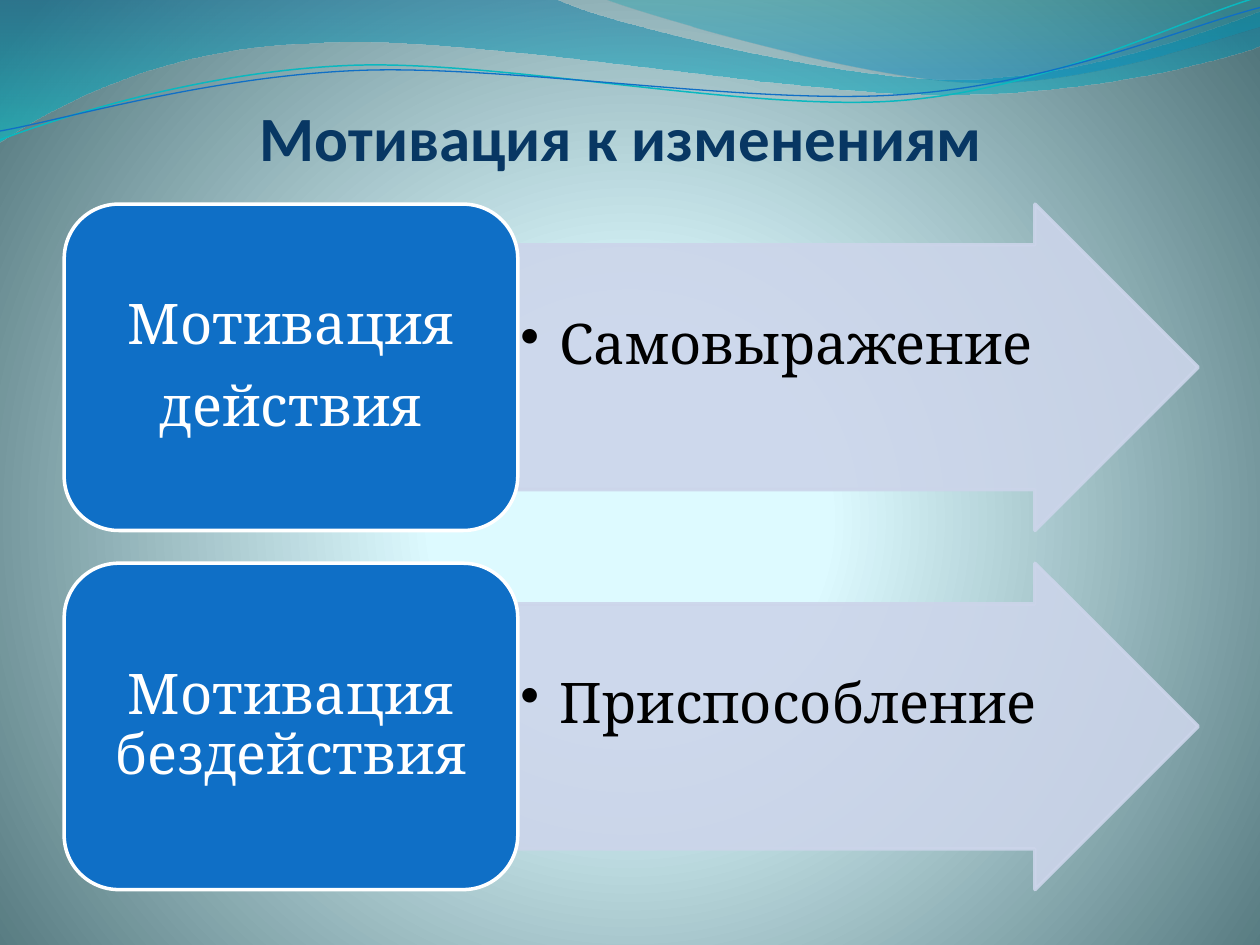
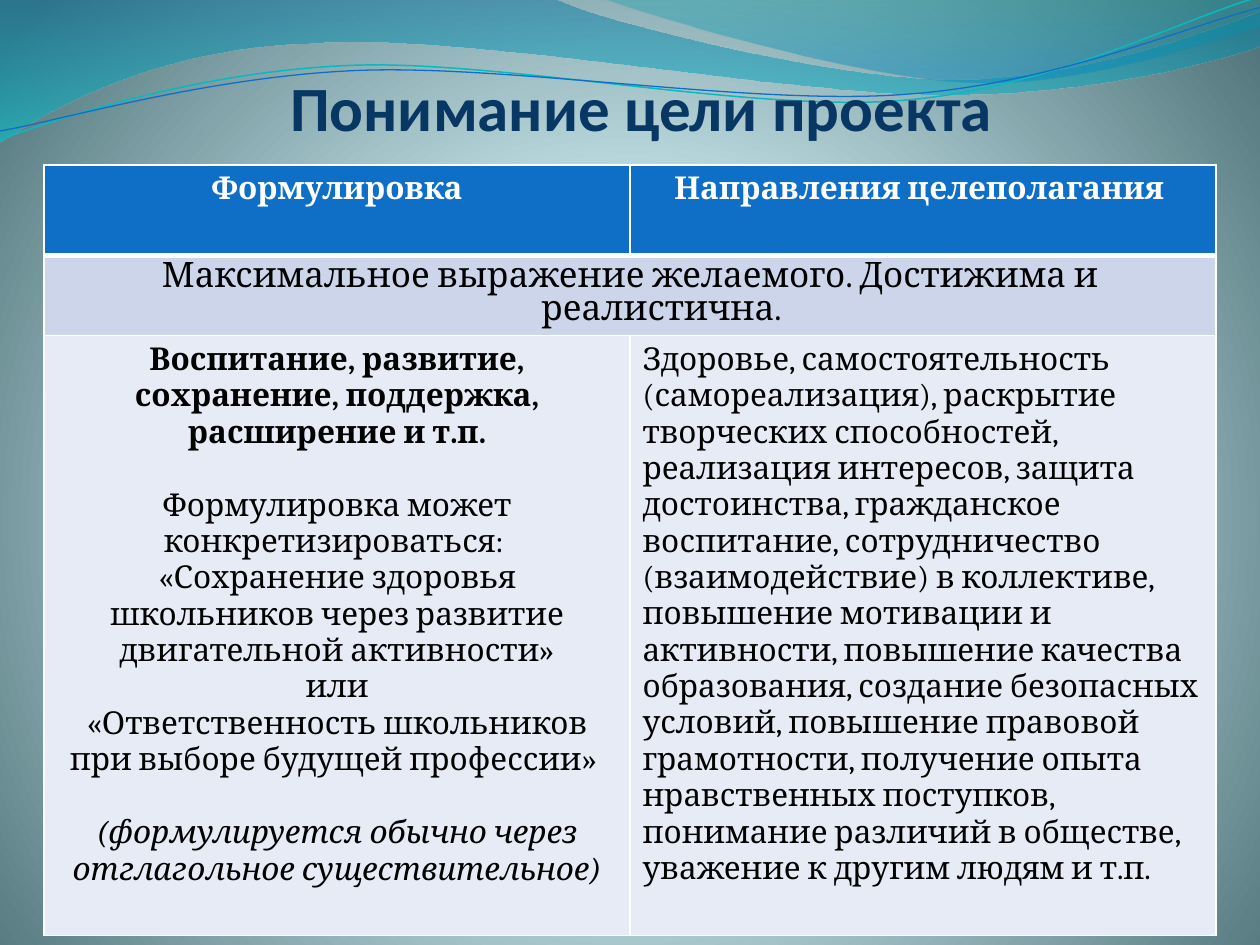
from lxml import etree
from pptx import Presentation
from pptx.dml.color import RGBColor
from pptx.enum.shapes import MSO_SHAPE
from pptx.enum.text import MSO_ANCHOR, PP_ALIGN
from pptx.oxml.ns import qn
from pptx.util import Inches, Pt

ARROW = MSO_SHAPE.RIGHT_ARROW
ROUNDED = MSO_SHAPE.ROUNDED_RECTANGLE
LEFT, CENTER = PP_ALIGN.LEFT, PP_ALIGN.CENTER
TOP, MIDDLE, BOTTOM = MSO_ANCHOR.TOP, MSO_ANCHOR.MIDDLE, MSO_ANCHOR.BOTTOM

BLUE = RGBColor(0x0F, 0x6F, 0xC6)
TEAL = RGBColor(0x0A, 0xB8, 0xBF)
NAVY = RGBColor(0x08, 0x37, 0x63)
LAVENDER = RGBColor(0xCC, 0xD5, 0xEA)
PALE = RGBColor(0xE7, 0xEB, 0xF5)
WHITE = RGBColor(0xFF, 0xFF, 0xFF)
BLACK = RGBColor(0x00, 0x00, 0x00)
ICE = RGBColor(0xDE, 0xFB, 0xFF)
LIGHT_ICE = RGBColor(0xDD, 0xFA, 0xFF)
SLATE = RGBColor(0x52, 0x76, 0x7C)
DEEP_BLUE = RGBColor(0x00, 0x74, 0xA1)
AQUA = RGBColor(0x00, 0xC6, 0xCF)
SEA = RGBColor(0x00, 0xA1, 0xA9)
SKY = RGBColor(0x00, 0x8B, 0xBF)

TITLE_FONT, BODY_FONT = "Calibri", "Cambria"

# Each segment holds one point for a line or three for a curve.
LEFT_WAVE = [
    [(0, 0)], [(4.4, -0.01)],
    [(4.76, 0.17), (6.64, 0.63), (7.58, 0.63)],
    [(8.53, 0.63), (9.58, 0.26), (10, 0.09)], [(10.01, 0.36)],
    [(9.83, 0.44), (8.7, 0.76), (7.46, 0.75)],
    [(6.22, 0.75), (3.82, 0.28), (2.57, 0.34)],
    [(1.29, 0.36), (0.46, 0.83), (-0.01, 1.13)], [(0, 0)],
]
RIGHT_WAVE = [
    [(4.79, -0.01)],
    [(5.09, 0.11), (6.82, 0.62), (7.69, 0.65)],
    [(8.56, 0.69), (9.61, 0.32), (10, 0.21)],
    [(10, 0)], [(4.79, -0.01)],
]
TEAL_LINE = [
    [(0, 1.11)],
    [(0.48, 0.93), (1.58, 0.57), (2.77, 0.52)],
    [(3.95, 0.47), (5.93, 0.89), (7.13, 0.8)],
    [(8.33, 0.71), (9.38, 0.15), (9.98, -0.02)],
]
BLUE_LINE = [
    [(0, 1.04)],
    [(0.47, 0.96), (1.64, 0.61), (2.83, 0.56)],
    [(4.03, 0.51), (5.97, 0.84), (7.17, 0.75)],
    [(8.36, 0.67), (9.41, 0.21), (10, 0.06)],
]

DIRECTIONS = (
    "Здоровье, самостоятельность (самореализация), раскрытие творческих "
    "способностей, реализация интересов, защита достоинства, гражданское "
    "воспитание, сотрудничество (взаимодействие) в коллективе, повышение "
    "мотивации и активности, повышение качества образования, создание "
    "безопасных условий, повышение правовой грамотности, получение опыта "
    "нравственных поступков, понимание различий в обществе, уважение к "
    "другим людям и т.п."
)


def add_child(parent, tag, **attributes):
    child = etree.SubElement(parent, qn(tag))
    for name, value in attributes.items():
        child.set(name, str(value))
    return child


def set_alpha(element, percent):
    for color in element.iter(qn("a:srgbClr")):
        add_child(color, "a:alpha", val=percent * 1000)


def set_gradient(fill, owner, stops, center=None):
    fill.gradient()
    gradient = next(owner.iter(qn("a:gradFill")))
    for child in list(gradient):
        gradient.remove(child)
    stop_list = add_child(gradient, "a:gsLst")
    for position, color, alpha in stops:
        stop = add_child(stop_list, "a:gs", pos=position * 1000)
        add_child(stop, "a:srgbClr", val=color)
        set_alpha(stop, alpha)
    if center:
        circle = add_child(gradient, "a:path", path="circle")
        sides = {side: percent * 1000 for side, percent in zip("ltrb", center)}
        add_child(circle, "a:fillToRect", **sides)
    else:
        add_child(gradient, "a:lin", ang=5400000, scaled=1)


def add_curve(page, segments, closed=False):
    points = [(Inches(x), Inches(y)) for segment in segments for x, y in segment]
    builder = page.shapes.build_freeform(*points[0])
    builder.add_line_segments(points[1:], close=closed)
    shape = builder.convert_to_shape()
    shape.shadow.inherit = False
    steps = iter(list(shape.element.iter(qn("a:lnTo"))))
    for segment in segments[1:]:
        group = [next(steps) for _ in segment]
        if len(group) == 3:
            curve = etree.Element(qn("a:cubicBezTo"))
            group[0].addprevious(curve)
            for step in group:
                curve.append(step[0])
                step.getparent().remove(step)
    return shape


def add_wave(page, segments, stops):
    wave = add_curve(page, segments, closed=True)
    wave.line.fill.background()
    set_gradient(wave.fill, wave.element, stops)


def add_wave_line(page, segments, color, width):
    line = add_curve(page, segments)
    line.fill.background()
    line.line.color.rgb = color
    line.line.width = Pt(width)


def add_paragraph(frame, text, size=18, font=BODY_FONT, color=BLACK, bold=False,
                  italic=False, align=CENTER, spacing=None, before=0,
                  indent=0, bullet=None):
    para = frame.paragraphs[0]
    if para.runs:
        para = frame.add_paragraph()
    para.alignment = align
    para.space_before = Pt(before)
    if spacing:
        para.line_spacing = spacing
    properties = para._p.get_or_add_pPr()
    if indent:
        properties.set("marL", str(Inches(indent)))
        properties.set("indent", str(-Inches(indent)))
    if bullet:
        add_child(properties, "a:buChar", char=bullet)
    span = para.add_run()
    span.text = text
    span.font.name = font
    span.font.size = Pt(size)
    span.font.color.rgb = color
    span.font.bold = bold
    span.font.italic = italic


def prepare_frame(shape, anchor, margins):
    frame = shape.text_frame
    frame.word_wrap = True
    frame.vertical_anchor = anchor
    (frame.margin_left, frame.margin_top,
     frame.margin_right, frame.margin_bottom) = map(Inches, margins)
    return frame


def add_text_box(page, left, top, width, height, anchor, margins):
    box = page.shapes.add_textbox(*map(Inches, (left, top, width, height)))
    return prepare_frame(box, anchor, margins)


def add_block(page, kind, left, top, width, height, fill, line):
    block = page.shapes.add_shape(kind, *map(Inches, (left, top, width, height)))
    block.shadow.inherit = False
    block.fill.solid()
    block.fill.fore_color.rgb = fill
    block.line.color.rgb = line
    block.line.width = Pt(2)
    return block


def add_page(deck, title, left, top):
    page = deck.slides.add_slide(deck.slide_layouts[6])
    set_gradient(page.background.fill, page.element,
                 [(0, ICE, 100), (25, LIGHT_ICE, 100), (100, SLATE, 100)],
                 center=(10, 110, 10, 100))
    add_wave(page, LEFT_WAVE, [(0, DEEP_BLUE, 45), (100, AQUA, 55)])
    add_wave(page, RIGHT_WAVE, [(0, SEA, 30), (80, SKY, 45)])
    add_wave_line(page, TEAL_LINE, TEAL, 0.85)
    add_wave_line(page, BLUE_LINE, BLUE, 0.75)
    frame = add_text_box(page, left, top, 9, 0.7, BOTTOM, (0, 0.05, 0, 0))
    add_paragraph(frame, title, size=36, font=TITLE_FONT, color=NAVY, bold=True)
    return page


def add_motivation(page, top, heading, outcome):
    arrow = add_block(page, ARROW, 4.11, top, 5.4, 2.59, LAVENDER, LAVENDER)
    arrow.adjustments[0] = 0.75
    arrow.adjustments[1] = 0.5
    set_alpha(arrow.element.spPr, 90)
    frame = add_text_box(page, 4.11, top + 0.87, 4.43, 1.4, TOP, [0.02] * 4)
    add_paragraph(frame, outcome, size=32, align=LEFT, spacing=0.9,
                  indent=0.31, bullet="•")
    card = add_block(page, ROUNDED, 0.51, top, 3.6, 2.59, BLUE, WHITE)
    frame = prepare_frame(card, MIDDLE, (0.13, 0.07, 0.13, 0.07))
    for index, text in enumerate(heading):
        add_paragraph(frame, text, size=32, color=WHITE, spacing=0.9,
                      before=12.5 if index else 0)


def style_cell(cell, fill, top_width=1, bottom_width=1):
    cell.fill.solid()
    cell.fill.fore_color.rgb = fill
    properties = cell._tc.get_or_add_tcPr()
    widths = {"a:lnL": 1, "a:lnR": 1, "a:lnT": top_width, "a:lnB": bottom_width}
    for position, (tag, width) in enumerate(widths.items()):
        border = etree.Element(qn(tag), w=str(Pt(width)))
        add_child(add_child(border, "a:solidFill"), "a:srgbClr", val=WHITE)
        properties.insert(position, border)


def add_goal_table(page):
    area = map(Inches, (0.35, 1.31, 9.3, 5.91))
    table = page.shapes.add_table(3, 2, *area).table
    table.first_row = False
    table.horz_banding = False
    for row, height in zip(table.rows, (0.72, 0.43, 4.76)):
        row.height = Inches(height)
    for column in table.columns:
        column.width = Inches(4.65)
    for index in range(2):
        style_cell(table.cell(0, index), BLUE, bottom_width=3)
        style_cell(table.cell(1, index), LAVENDER, top_width=3)
        style_cell(table.cell(2, index), PALE)
    for index, text in enumerate(("Формулировка", "Направления целеполагания ")):
        add_paragraph(table.cell(0, index).text_frame, text, color=WHITE, bold=True)
    table.cell(1, 0).merge(table.cell(1, 1))
    add_paragraph(table.cell(1, 0).text_frame,
                  "Максимальное выражение желаемого. Достижима и реалистична.",
                  size=20, spacing=0.8, indent=0.5)
    wording = [
        ("Воспитание, развитие, сохранение, поддержка, расширение и т.п.",
         {"bold": True}),
        ("Формулировка может конкретизироваться: ", {"before": 21}),
        ("«Сохранение здоровья школьников через развитие двигательной активности»", {}),
        (" или ", {}),
        ("«Ответственность школьников при выборе будущей профессии» ", {}),
        ("(формулируется обычно через отглагольное существительное)",
         {"italic": True, "before": 21}),
    ]
    for text, style in wording:
        add_paragraph(table.cell(2, 0).text_frame, text, **style)
    add_paragraph(table.cell(2, 1).text_frame, DIRECTIONS, align=LEFT)


def main():
    deck = Presentation()
    deck.slide_width, deck.slide_height = Inches(10), Inches(7.5)
    page = add_page(deck, "Мотивация к изменениям", 0.43, 0.68)
    add_motivation(page, 1.62, ["Мотивация", "действия"], "Самовыражение")
    add_motivation(page, 4.47, ["Мотивация бездействия"], "Приспособление")
    page = add_page(deck, "Понимание цели проекта", 0.59, 0.44)
    add_goal_table(page)
    deck.save("out.pptx")


if __name__ == "__main__":
    main()
